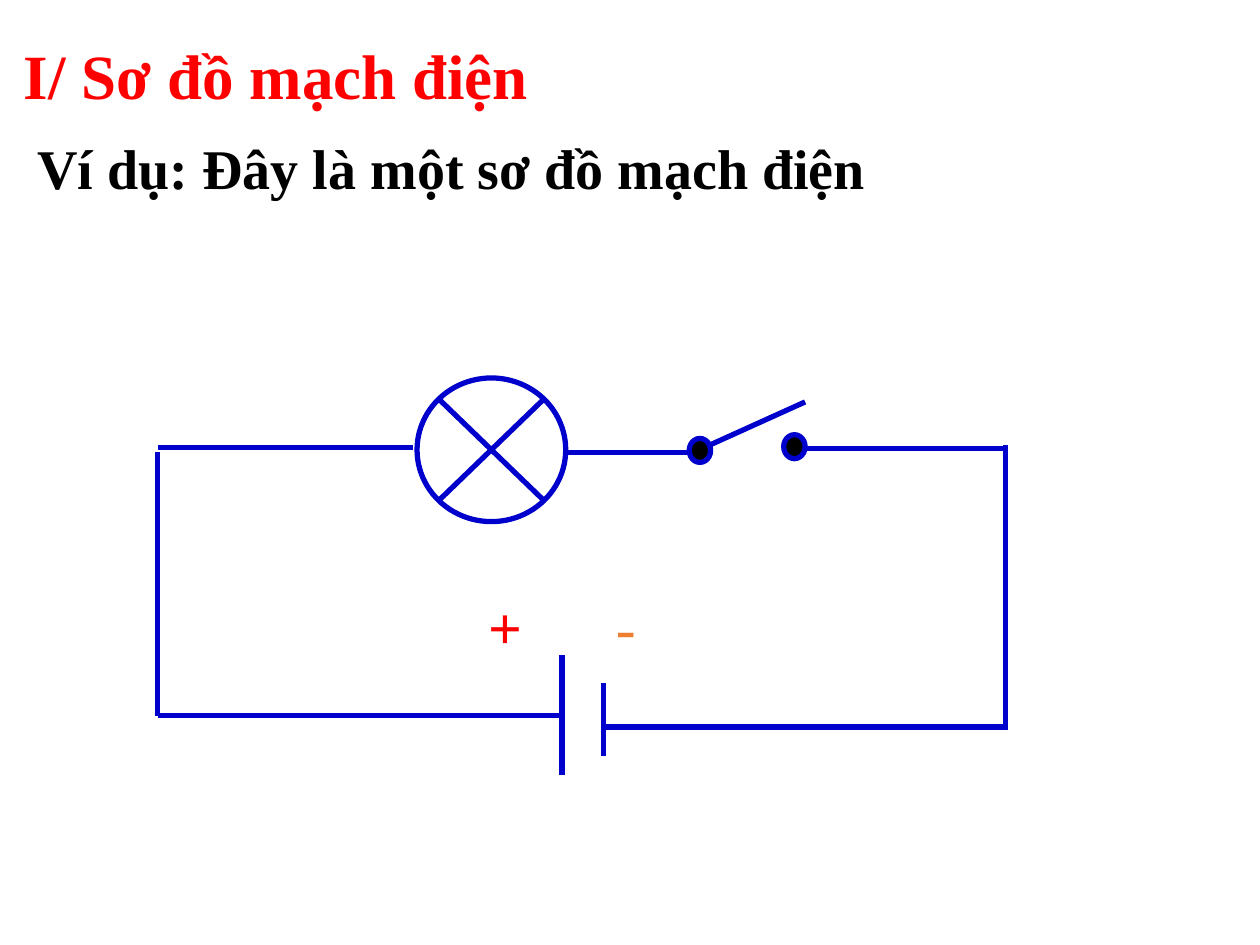
from dataclasses import dataclass

from lxml.etree import SubElement
from pptx import Presentation
from pptx.dml.color import RGBColor
from pptx.enum.shapes import MSO_CONNECTOR, MSO_SHAPE
from pptx.enum.text import MSO_ANCHOR, MSO_AUTO_SIZE, PP_ALIGN
from pptx.oxml.ns import qn
from pptx.shapes.base import BaseShape
from pptx.shapes.shapetree import GroupShapes
from pptx.util import Emu, Pt

SCALE = 9144  # EMU per px, 100 px to the inch
COLORS = {"wire": "0000CC", "dot": "000000", "text": "000000",
          "red": "FF0000", "minus": "ED7D31"}
FONT = "Times New Roman"


@dataclass
class Box:
    left: int
    top: int
    width: int
    height: int


@dataclass
class Wire:
    x1: int
    y1: int
    x2: int
    y2: int


@dataclass
class Label:
    text: str
    box: Box
    size: int
    color: str
    bold: bool = True


TITLE = Label("I/ Sơ đồ mạch điện", Box(9, 24, 442, 71), 36, "red")
INTRO = Label("Ví dụ: Đây là một sơ đồ mạch điện", Box(20, 101, 867, 64), 32, "text")
POLES = [
    Label("+", Box(378, 463, 101, 99), 34, "red"),
    Label("-", Box(479, 463, 101, 99), 34, "minus", False),
]
LAMP = Box(331, 300, 118, 114)
DOTS = [Box(547, 348, 17, 19), Box(622, 345, 17, 19)]
WIRES = [
    Wire(125, 355, 328, 355),  # left wire to lamp
    Wire(450, 359, 552, 359),  # lamp to switch
    Wire(555, 357, 639, 319),  # switch arm
    Wire(631, 356, 800, 356),  # switch to right side
    Wire(798, 353, 798, 576),  # right side
    Wire(479, 577, 800, 577),  # right side to cell
    Wire(479, 542, 479, 600),  # short plate
    Wire(446, 520, 446, 615),  # long plate
    Wire(125, 568, 446, 568),  # cell to left side
    Wire(125, 359, 125, 568),  # left side
]


def px(*vals: int) -> list[Emu]:
    return [Emu(val * SCALE) for val in vals]


def spot(box: Box) -> list[Emu]:
    return px(box.left, box.top, box.width, box.height)


def rgb(name: str) -> RGBColor:
    return RGBColor.from_string(COLORS[name])


def stroke(shape: BaseShape) -> None:
    shape.line.color.rgb = rgb("wire")
    shape.line.width = Pt(3)


def write(shape: BaseShape, label: Label) -> None:
    """Place a text shape and fill it with its formatted label."""
    shape.left, shape.top, shape.width, shape.height = spot(label.box)
    frame = shape.text_frame
    frame.text = label.text
    para = frame.paragraphs[0]
    para.alignment = PP_ALIGN.LEFT
    look = {"word_wrap": True, "vertical_anchor": MSO_ANCHOR.TOP,
            "auto_size": MSO_AUTO_SIZE.SHAPE_TO_FIT_TEXT}
    for key, val in look.items():
        setattr(frame, key, val)
    font = para.runs[0].font
    for key, val in {"name": FONT, "size": Pt(label.size), "bold": label.bold}.items():
        setattr(font, key, val)
    font.color.rgb = rgb(label.color)


def draw_wire(shapes: GroupShapes, wire: Wire) -> None:
    ends = px(wire.x1, wire.y1, wire.x2, wire.y2)
    line = shapes.add_connector(MSO_CONNECTOR.STRAIGHT, *ends)
    stroke(line)
    SubElement(line._element.spPr, qn("a:effectLst"))


def draw_part(shapes: GroupShapes, kind: MSO_SHAPE, box: Box, fill: str = "") -> None:
    part = shapes.add_shape(kind, *spot(box))
    part.shadow.inherit = False
    stroke(part)
    if fill:
        part.fill.solid()
        part.fill.fore_color.rgb = rgb(fill)
    else:
        part.fill.background()


def main() -> None:
    deck = Presentation()
    deck.slide_width, deck.slide_height = px(1000, 750)
    slide = deck.slides.add_slide(deck.slide_layouts[5])
    write(slide.shapes.title, TITLE)
    write(slide.shapes.add_textbox(*spot(INTRO.box)), INTRO)

    plan = slide.shapes.add_group_shape().shapes
    draw_part(plan, MSO_SHAPE.FLOWCHART_SUMMING_JUNCTION, LAMP)
    for wire in WIRES:
        draw_wire(plan, wire)
    for dot in DOTS:
        draw_part(plan, MSO_SHAPE.OVAL, dot, "dot")
    for pole in POLES:
        write(plan.add_textbox(*spot(pole.box)), pole)
    deck.save("out.pptx")


if __name__ == "__main__":
    main()
